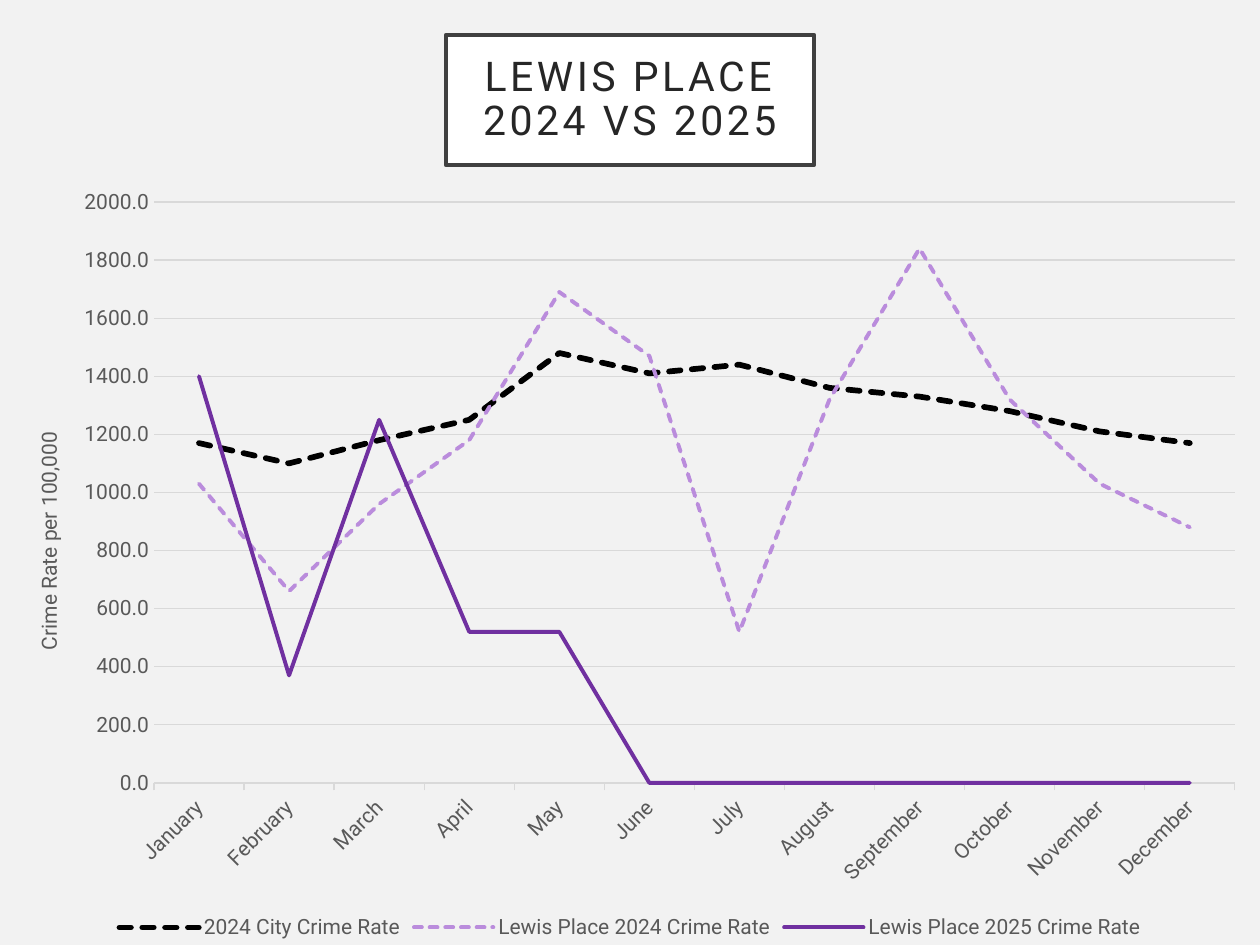
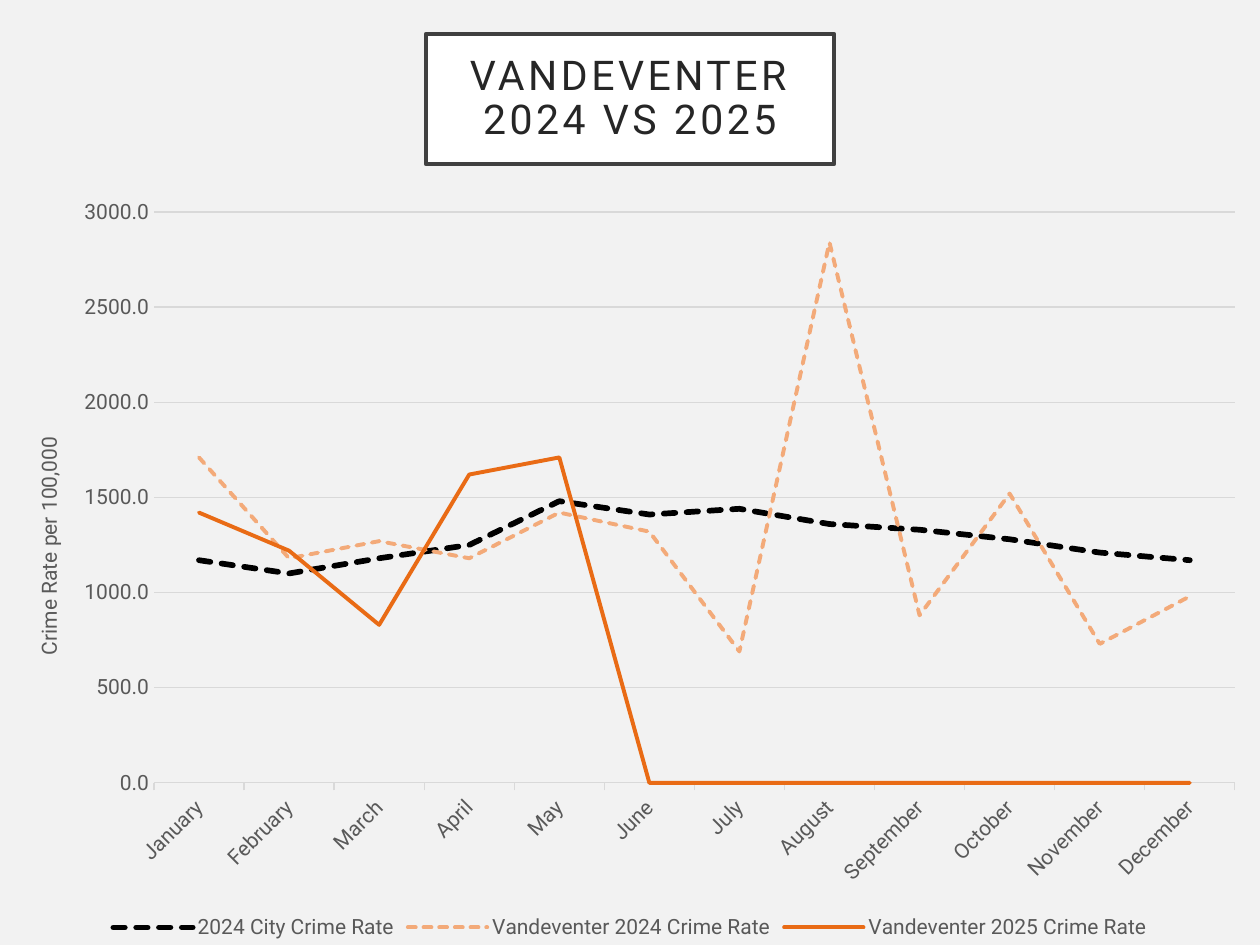
from dataclasses import dataclass
from typing import Optional

from lxml import etree
from pptx import Presentation
from pptx import util as u
from pptx.chart import data as chart_data
from pptx.dml.color import RGBColor
from pptx.enum import chart as ch
from pptx.enum import dml, text
from pptx.oxml.ns import qn

PX_PER_INCH = 126
SLIDE_W, SLIDE_H = 1260, 945

MONTHS = ["January", "February", "March", "April", "May", "June", "July",
          "August", "September", "October", "November", "December"]


@dataclass(frozen=True)
class Theme:
    font: str = "Roboto"
    background: str = "F2F2F2"
    title_fill: str = "FFFFFF"
    title_border: str = "404040"
    title_ink: str = "262626"
    chart_ink: str = "595959"
    grid: str = "D9D9D9"
    title_size: float = 23.4
    chart_size: float = 12
    border_width: float = 2.5
    grid_width: float = 0.75


@dataclass(frozen=True)
class Box:
    left: int
    top: int
    width: int
    height: int


@dataclass(frozen=True)
class RateLine:
    name: str
    values: list[Optional[int]]
    color: str
    width: float = 2.25
    dashed: bool = False


@dataclass(frozen=True)
class Neighborhood:
    heading: str
    title_box: Box
    chart_top: int
    plot_top: int
    axis_title_top: int
    axis_max: int
    axis_step: int
    rates: list[RateLine]


THEME = Theme()
PLOT_LEFT, PLOT_RIGHT, PLOT_BOTTOM = 154, 1235, 783
AXIS_TITLE_LEFT = 31

CITY_2024 = RateLine(
    "2024 City Crime Rate",
    [1170, 1100, 1180, 1250, 1480, 1410, 1440, 1360, 1330, 1280, 1210, 1170],
    "000000", 3.25, dashed=True)

NEIGHBORHOODS = [
    Neighborhood(
        "LEWIS PLACE\v2024 VS 2025", Box(446, 35, 368, 130),
        chart_top=175, plot_top=202, axis_title_top=428,
        axis_max=2000, axis_step=200,
        rates=[
            CITY_2024,
            RateLine("Lewis Place 2024 Crime Rate",
                     [1030, 660, 960, 1180, 1690, 1470, 520, 1320, 1840, 1320, 1030, 880],
                     "BA8CDC", dashed=True),
            RateLine("Lewis Place 2025 Crime Rate",
                     [1400, 370, 1250, 520, 520] + [None] * 7, "7030A0"),
        ]),
    Neighborhood(
        "VANDEVENTER\v2024 VS 2025", Box(426, 34, 408, 130),
        chart_top=185, plot_top=212, axis_title_top=433,
        axis_max=3000, axis_step=500,
        rates=[
            CITY_2024,
            RateLine("Vandeventer 2024 Crime Rate",
                     [1710, 1180, 1270, 1180, 1420, 1320, 690, 2840, 880, 1520, 730, 980],
                     "F3AA79", dashed=True),
            RateLine("Vandeventer 2025 Crime Rate",
                     [1420, 1220, 830, 1620, 1710] + [None] * 7, "E96B15"),
        ]),
]


def px(length: int) -> u.Emu:
    return u.Emu(round(length * 914400 / PX_PER_INCH))


def style_font(font, size: float, color: str) -> None:
    font.name, font.size, font.bold = THEME.font, u.Pt(size), False
    font.color.rgb = RGBColor.from_string(color)


def style_line(line, color: str, width: float) -> None:
    line.color.rgb = RGBColor.from_string(color)
    line.width = u.Pt(width)


def set_layout(parent, **settings) -> None:
    """Give a chart part a manual layout, replacing the automatic one."""
    layout = parent.find(qn("c:layout"))
    if layout is not None:
        parent.remove(layout)
    layout = etree.Element(qn("c:layout"))
    parent.insert(0 if parent.find(qn("c:tx")) is None else 1, layout)
    manual = etree.SubElement(layout, qn("c:manualLayout"))
    for tag, value in settings.items():
        etree.SubElement(manual, qn(f"c:{tag}")).set("val", str(value))


def add_title(slide, area: Neighborhood) -> None:
    title, box = slide.shapes.title, area.title_box
    title.left, title.top = px(box.left), px(box.top)
    title.width, title.height = px(box.width), px(box.height)
    title.fill.solid()
    title.fill.fore_color.rgb = RGBColor.from_string(THEME.title_fill)
    style_line(title.line, THEME.title_border, THEME.border_width)

    frame = title.text_frame
    frame.text = area.heading
    frame.word_wrap = True
    frame.auto_size = text.MSO_AUTO_SIZE.NONE
    frame.vertical_anchor = text.MSO_ANCHOR.MIDDLE
    frame.margin_left = frame.margin_right = px(25)
    frame.margin_top = frame.margin_bottom = px(25)
    heading = frame.paragraphs[0]
    heading.alignment = text.PP_ALIGN.CENTER
    heading.line_spacing = 0.9
    for run in heading.runs:
        style_font(run.font, THEME.title_size, THEME.title_ink)
        run.font._element.set("spc", "200")


def style_month_axis(axis) -> None:
    axis.major_tick_mark = ch.XL_TICK_MARK.OUTSIDE
    axis.minor_tick_mark = ch.XL_TICK_MARK.NONE
    style_line(axis.format.line, THEME.grid, THEME.grid_width)
    style_font(axis.tick_labels.font, THEME.chart_size, THEME.chart_ink)
    # Slant the month names
    axis._element.find(f"{qn('c:txPr')}/{qn('a:bodyPr')}").set("rot", "-2700000")


def style_rate_axis(axis, area: Neighborhood) -> None:
    axis.minimum_scale, axis.maximum_scale = 0, area.axis_max
    axis.major_unit = area.axis_step
    axis.major_tick_mark = axis.minor_tick_mark = ch.XL_TICK_MARK.NONE
    axis.format.line.fill.background()
    axis.has_major_gridlines = True
    style_line(axis.major_gridlines.format.line, THEME.grid, THEME.grid_width)
    labels = axis.tick_labels
    style_font(labels.font, THEME.chart_size, THEME.chart_ink)
    labels.number_format, labels.number_format_is_linked = "0.0", False

    # Upright axis title beside the labels
    axis.has_title = True
    frame = axis.axis_title.text_frame
    frame.text = "Crime Rate per 100,000"
    style_font(frame.paragraphs[0].runs[0].font, THEME.chart_size, THEME.chart_ink)
    title = axis._element.find(qn("c:title"))
    body = next(title.iter(qn("a:bodyPr")))
    body.set("rot", "-5400000")
    body.set("vert", "horz")
    set_layout(title, xMode="edge", yMode="edge",
               x=round(AXIS_TITLE_LEFT / SLIDE_W, 4),
               y=round((area.axis_title_top - area.chart_top)
                       / (SLIDE_H - area.chart_top), 4))


def add_rate_chart(slide, area: Neighborhood) -> None:
    rates = chart_data.CategoryChartData(number_format="0.0")
    rates.categories = MONTHS
    for rate in area.rates:
        rates.add_series(rate.name, rate.values)
    height = SLIDE_H - area.chart_top
    chart = slide.shapes.add_chart(
        ch.XL_CHART_TYPE.LINE, 0, px(area.chart_top), px(SLIDE_W), px(height),
        rates).chart
    chart.has_title = False
    style_font(chart.font, THEME.chart_size, THEME.chart_ink)

    # Rate lines
    plot = chart.plots[0]
    plot.vary_by_categories = False
    for series, rate in zip(plot.series, area.rates):
        series.smooth = False
        series.marker.style = ch.XL_MARKER_STYLE.NONE
        line = series.format.line
        style_line(line, rate.color, rate.width)
        if rate.dashed:
            line.dash_style = dml.MSO_LINE.SQUARE_DOT
        series._element.find(f"{qn('c:spPr')}/{qn('a:ln')}").set("cap", "rnd")

    # Axes and legend
    style_month_axis(chart.category_axis)
    style_rate_axis(chart.value_axis, area)
    chart.has_legend = True
    chart.legend.position = ch.XL_LEGEND_POSITION.BOTTOM
    chart.legend.include_in_layout = False
    style_font(chart.legend.font, THEME.chart_size, THEME.chart_ink)

    # Plot position, and months without data drawn at zero
    root = chart.element
    set_layout(next(root.iter(qn("c:plotArea"))), layoutTarget="inner",
               xMode="edge", yMode="edge",
               x=round(PLOT_LEFT / SLIDE_W, 4),
               y=round((area.plot_top - area.chart_top) / height, 4),
               w=round((PLOT_RIGHT - PLOT_LEFT) / SLIDE_W, 4),
               h=round((PLOT_BOTTOM - area.plot_top) / height, 4))
    next(root.iter(qn("c:dispBlanksAs"))).set("val", "zero")


def main() -> None:
    deck = Presentation()
    deck.slide_width, deck.slide_height = px(SLIDE_W), px(SLIDE_H)
    backdrop = deck.slide_master.background.fill
    backdrop.solid()
    backdrop.fore_color.rgb = RGBColor.from_string(THEME.background)
    title_only = deck.slide_layouts[5]
    for area in NEIGHBORHOODS:
        slide = deck.slides.add_slide(title_only)
        add_title(slide, area)
        add_rate_chart(slide, area)
    deck.save("out.pptx")


if __name__ == "__main__":
    main()
